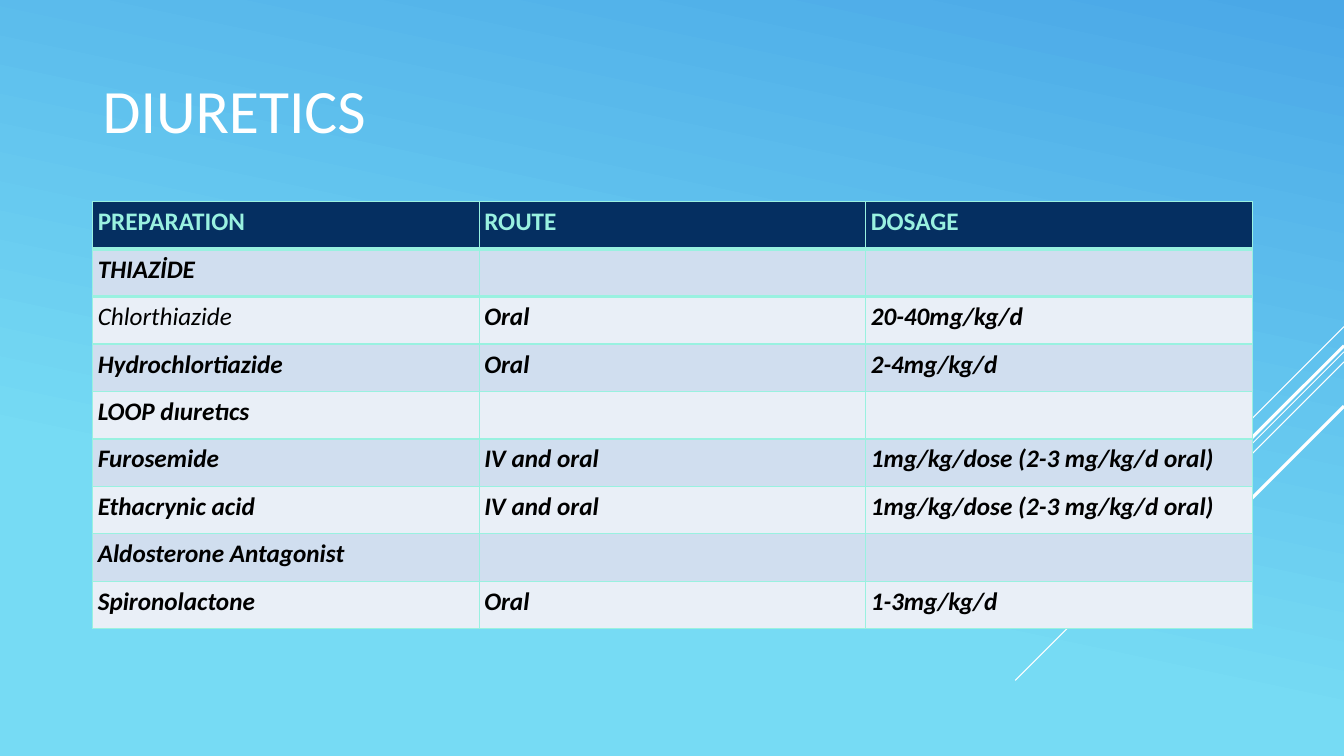
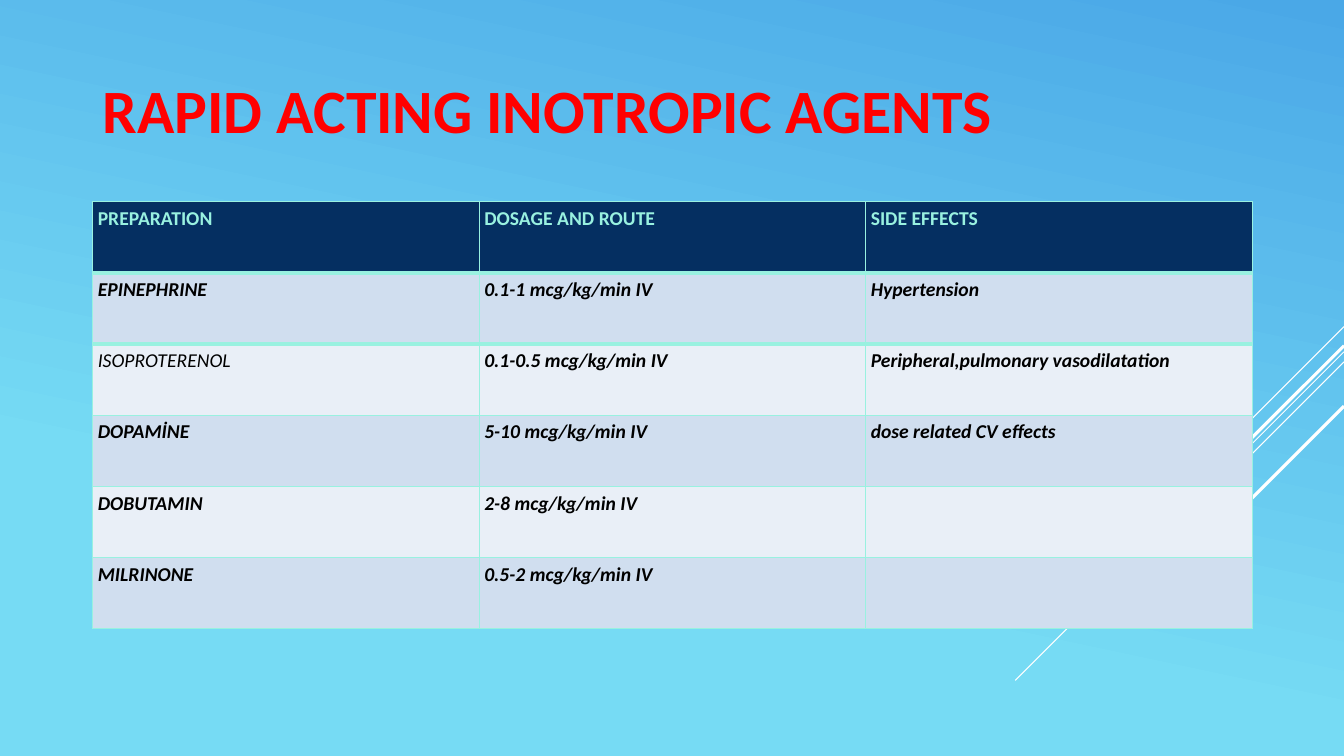
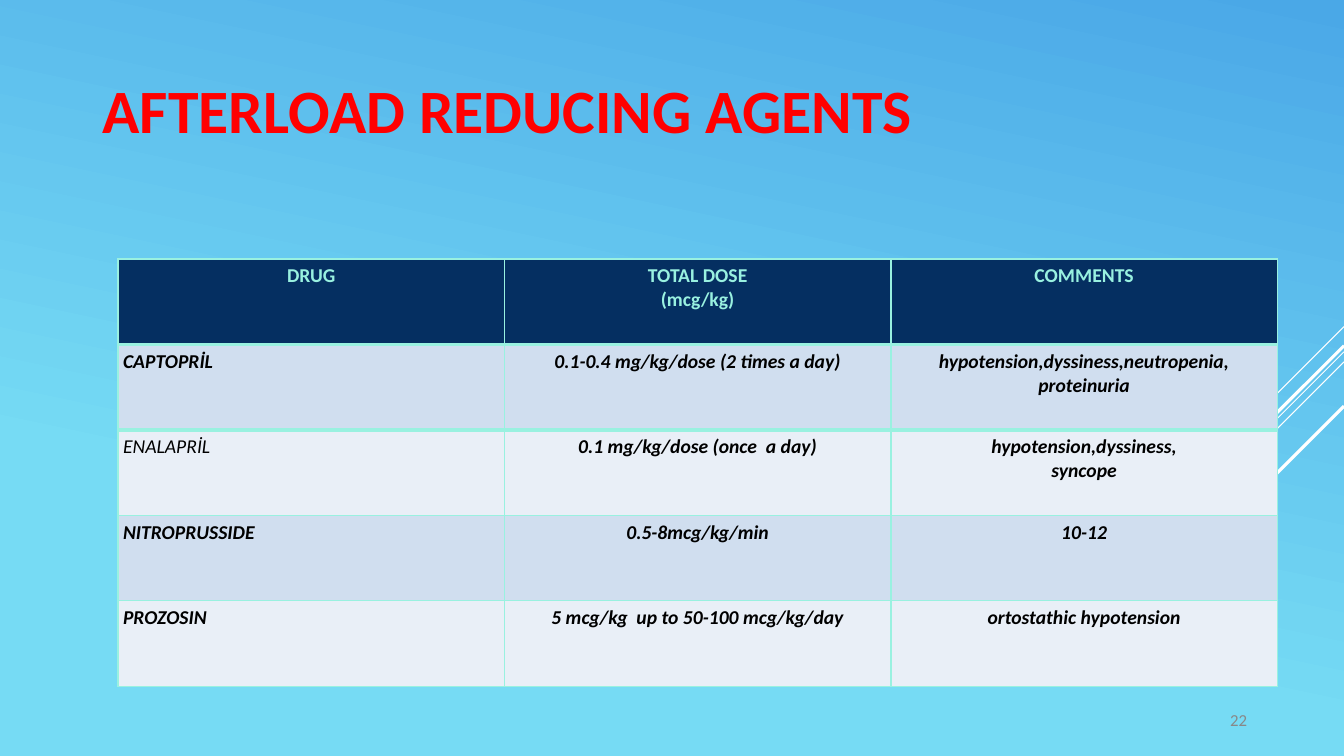
from lxml.etree import SubElement
from pptx import Presentation
from pptx.dml.color import RGBColor
from pptx.enum.shapes import MSO_CONNECTOR
from pptx.enum.text import MSO_ANCHOR, PP_ALIGN
from pptx.oxml.ns import qn
from pptx.util import Inches, Pt

# Shared look
WIDTH, HEIGHT = 13.33, 7.5
MARGIN, CONTENT = 0.92, 11.5
TABLE_HEIGHT, INSET = 4.24, Inches(0.05)
WHITE, RED, BLACK, GREY = "FFFFFF", "FF0000", "000000", "888888"
NAVY, MINT, BANDS = "052F61", "99F1E0", ("E9EFF7", "D0DEEF")
SKY = ((0, "4AA8E7"), (0.7, "76DBF4"))
# Diagonals start at the right edge: top, reach (both ways), line width
DIAGONALS = ((3.24, 1, 0.75), (3.49, 3.26, 0.75), (3.59, 2.07, 0.75),
             (3.43, 1.91, 2.25), (4.03, 1.39, 2.25))

# Slides: body align is for the columns after the first
SLIDES = [
    {"title": "DIURETICS", "color": WHITE, "bold": False, "size": 18,
     "corner": (MARGIN, 2), "align": PP_ALIGN.LEFT, "number": None,
     "rows": [
         ("PREPARATION", "ROUTE", "DOSAGE"),
         ("THIAZİDE", "", ""),
         ("Chlorthiazide", "Oral", "20-40mg/kg/d"),
         ("Hydrochlortiazide", "Oral", "2-4mg/kg/d"),
         ("LOOP dıuretıcs", "", ""),
         ("Furosemide", "IV and oral", "1mg/kg/dose (2-3 mg/kg/d oral)"),
         ("Ethacrynic acid", "IV and oral", "1mg/kg/dose (2-3 mg/kg/d oral)"),
         ("Aldosterone Antagonist", "", ""),
         ("Spironolactone", "Oral", "1-3mg/kg/d")]},
    {"title": "RAPID ACTING INOTROPIC AGENTS", "color": RED, "bold": True, "size": 14,
     "corner": (MARGIN, 2), "align": PP_ALIGN.LEFT, "number": None,
     "rows": [
         ("PREPARATION", "DOSAGE AND ROUTE", "SIDE EFFECTS"),
         ("EPINEPHRINE", "0.1-1 mcg/kg/min IV", "Hypertension"),
         ("ISOPROTERENOL", "0.1-0.5 mcg/kg/min IV", "Peripheral,pulmonary vasodilatation"),
         ("DOPAMİNE", "5-10 mcg/kg/min IV", "dose related CV effects"),
         ("DOBUTAMIN", "2-8 mcg/kg/min IV", ""),
         ("MILRINONE", "0.5-2 mcg/kg/min IV", "")]},
    {"title": "AFTERLOAD REDUCING AGENTS", "color": RED, "bold": True, "size": 14,
     "corner": (MARGIN + 0.25, 2.57), "align": PP_ALIGN.CENTER, "number": "22",
     "rows": [
         ("DRUG", "TOTAL DOSE\n(mcg/kg)", "COMMENTS"),
         ("CAPTOPRİL", "0.1-0.4 mg/kg/dose (2 times a day)",
          "hypotension,dyssiness,neutropenia,\nproteinuria"),
         ("ENALAPRİL", "0.1 mg/kg/dose (once  a day)", "hypotension,dyssiness,\nsyncope"),
         ("NITROPRUSSIDE", "0.5-8mcg/kg/min", "10-12"),
         ("PROZOSIN", "5 mcg/kg  up to 50-100 mcg/kg/day", "ortostathic hypotension")]},
]


def rgb(code):
    return RGBColor.from_string(code)


def write(frame, text, size, color, bold=False, italic=False, align=PP_ALIGN.LEFT, spacing=1.0):
    """Fill a text frame, one paragraph per line of text."""
    frame.word_wrap = True
    for index, line in enumerate(text.split("\n")):
        para = frame.add_paragraph() if index else frame.paragraphs[0]
        para.alignment, para.line_spacing = align, spacing
        span = para.add_run()
        span.text = line
        span.font.name, span.font.size = "Calibri", Pt(size)
        span.font.bold, span.font.italic = bold, italic
        span.font.color.rgb = rgb(color)


deck = Presentation()
deck.slide_width, deck.slide_height = Inches(WIDTH), Inches(HEIGHT)

# Background gradient, set once on the master
sky = deck.slide_master.background.fill
sky.gradient()
sky.gradient_angle = 360 - 102
for stop, (position, color) in zip(sky.gradient_stops, SKY):
    stop.position = position
    stop.color.rgb = rgb(color)

for content in SLIDES:
    page = deck.slides.add_slide(deck.slide_layouts[6])

    # Diagonal lines
    for top, reach, weight in DIAGONALS:
        diagonal = page.shapes.add_connector(
            MSO_CONNECTOR.STRAIGHT, Inches(WIDTH), Inches(top),
            Inches(WIDTH - reach), Inches(top + reach))
        diagonal.line.color.rgb = rgb(WHITE)
        diagonal.line.width = Pt(weight)
        SubElement(diagonal._element.spPr, qn("a:effectLst"))

    # Title
    box = page.shapes.add_textbox(Inches(MARGIN), Inches(0.4), Inches(CONTENT), Inches(1.45))
    box.text_frame.vertical_anchor = MSO_ANCHOR.MIDDLE
    write(box.text_frame, content["title"], 44, content["color"], content["bold"], spacing=0.9)

    # Page number
    if content["number"]:
        box = page.shapes.add_textbox(Inches(MARGIN + CONTENT - 3), Inches(7), Inches(3), Inches(0.29))
        frame = box.text_frame
        frame.vertical_anchor = MSO_ANCHOR.MIDDLE
        frame.margin_left = frame.margin_right = frame.margin_top = frame.margin_bottom = INSET
        write(frame, content["number"], 12, GREY, align=PP_ALIGN.RIGHT)

    # Table
    rows = content["rows"]
    left, top = content["corner"]
    table = page.shapes.add_table(len(rows), len(rows[0]), Inches(left), Inches(top),
                                  Inches(CONTENT), Inches(TABLE_HEIGHT)).table
    table.first_row = table.horz_banding = False
    for r, texts in enumerate(rows):
        header = r == 0
        # Heavy rules lie above and below the first body row
        weights = {"L": 1, "R": 1, "T": 3 if r in (1, 2) else 1, "B": 3 if r in (0, 1) else 1}
        for c, text in enumerate(texts):
            cell = table.cell(r, c)
            cell.margin_left = cell.margin_right = cell.margin_top = cell.margin_bottom = INSET
            for side, weight in weights.items():
                border = SubElement(cell._tc.get_or_add_tcPr(), qn("a:ln" + side), w=str(Pt(weight)))
                paint = SubElement(border, qn("a:solidFill"))
                SubElement(paint, qn("a:srgbClr"), val=MINT)
            cell.fill.solid()
            cell.fill.fore_color.rgb = rgb(NAVY if header else BANDS[r % 2])
            if text:
                write(cell.text_frame, text, content["size"], MINT if header else BLACK,
                      bold=(r, c) != (2, 0), italic=not header,
                      align=content["align"] if header or c else PP_ALIGN.LEFT)

deck.save("out.pptx")
